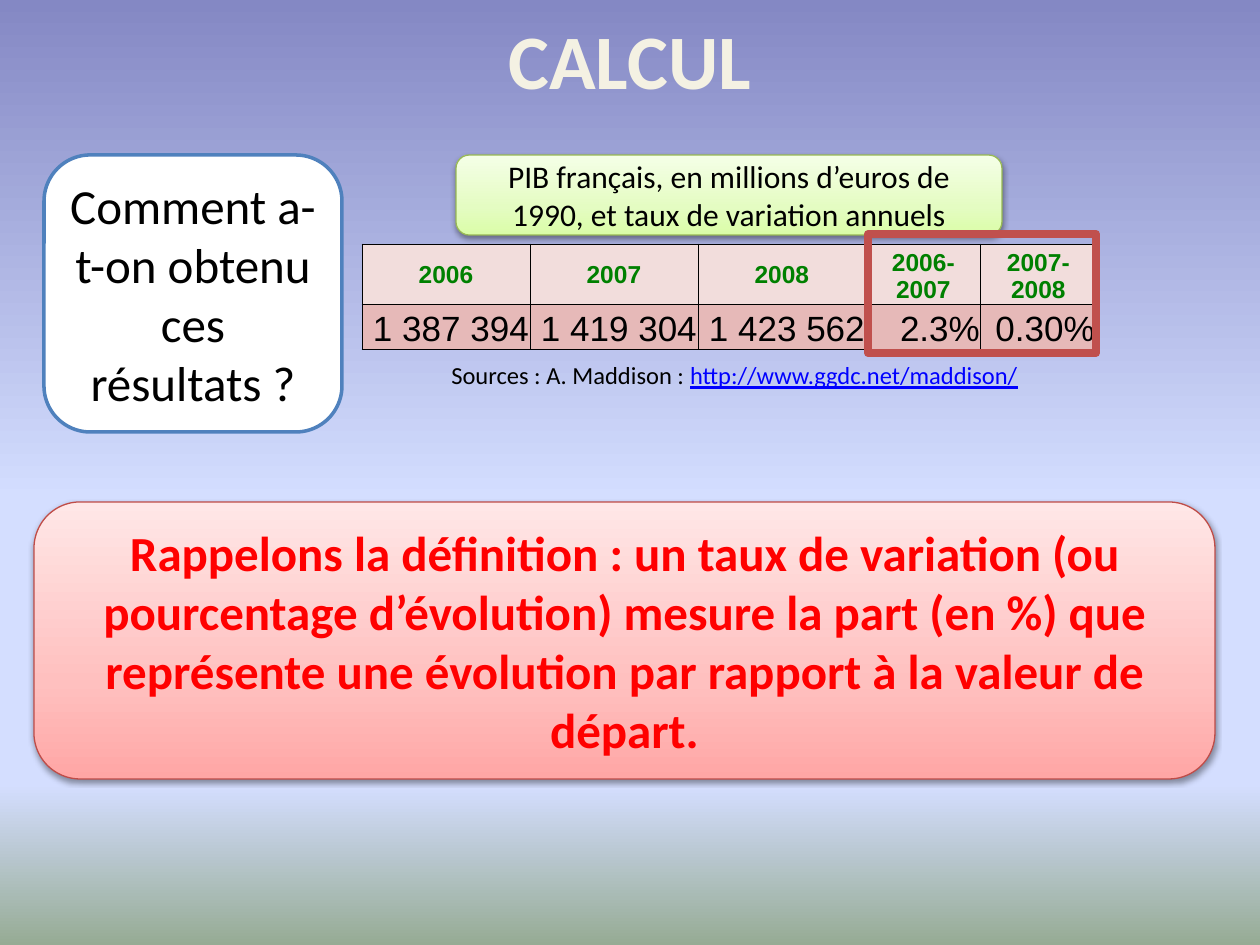
from lxml.etree import SubElement
from pptx import Presentation
from pptx.dml.color import RGBColor
from pptx.enum.shapes import MSO_SHAPE as Shape
from pptx.enum.text import MSO_ANCHOR as Anchor, PP_ALIGN as Align
from pptx.oxml import parse_xml
from pptx.oxml.ns import nsdecls, qn
from pptx.util import Pt

PX = 914400 / 126
color = RGBColor.from_string


def paint_gradient(fill, element, angle, stops):
    fill.gradient()
    fill.gradient_angle = angle
    stop_list = element.find(".//" + qn("a:gsLst"))
    for stop in list(stop_list):
        stop_list.remove(stop)
    for position, hex_color in stops:
        stop = SubElement(stop_list, qn("a:gs"), pos=str(position * 1000))
        SubElement(stop, qn("a:srgbClr"), val=hex_color)


def write(text_frame, text, size, hex_color, bold=False, name="Calibri", align=Align.CENTER):
    text_frame.text = text
    text_frame.word_wrap = True
    paragraph = text_frame.paragraphs[0]
    paragraph.alignment = align
    font = paragraph.runs[0].font
    font.size, font.bold, font.name = Pt(size), bold, name
    font.color.rgb = color(hex_color)


presentation = Presentation()
presentation.slide_width = round(1260 * PX)
presentation.slide_height = round(945 * PX)
slide = presentation.slides.add_slide(presentation.slide_layouts[6])
paint_gradient(slide.background.fill, slide._element, 270,
               [(0, "8488C4"), (53, "D4DEFF"), (83, "D4DEFF"), (100, "96AB94")])

title = slide.shapes.add_textbox(*[round(n * PX) for n in (63, 0, 1134, 118)])
write(title.text_frame, "CALCUL", 44, "F4F1E3", True)
title.text_frame.vertical_anchor = Anchor.MIDDLE

panels = [
    ((44, 155, 298, 277), "Comment a-t-on obtenu ces résultats ?", 28, "000000", False,
     "4F81BD", 2, None),
    ((34, 502, 1181, 277),
     "Rappelons la définition : un taux de variation (ou pourcentage d’évolution) mesure la part "
     "(en %) que représente une évolution par rapport à la valeur de départ.",
     28, "FF0000", True, "BF4C48", 0.75, ["FFA6A5", "FFC0BF", "FFE7E7"]),
    ((456, 155, 546, 80), "PIB français, en millions d’euros de 1990, et taux de variation annuels",
     18, "000000", False, "98B955", 0.75, ["DAFDA7", "E4FCC2", "F5FFE7"]),
]
for box, text, size, text_color, bold, line_color, line_width, gradient in panels:
    panel = slide.shapes.add_shape(Shape.ROUNDED_RECTANGLE, *[round(n * PX) for n in box])
    panel.shadow.inherit = False
    panel.line.color.rgb = color(line_color)
    panel.line.width = Pt(line_width)
    if gradient:
        paint_gradient(panel.fill, panel._element, 90, zip((0, 35, 100), gradient))
        panel._element.spPr.find(qn("a:effectLst")).append(parse_xml(
            f'<a:outerShdw {nsdecls("a")} blurRad="40000" dist="20000" dir="5400000" rotWithShape="0">'
            '<a:srgbClr val="000000"><a:alpha val="38000"/></a:srgbClr></a:outerShdw>'))
    else:
        panel.fill.solid()
        panel.fill.fore_color.rgb = color("FFFFFF")
    write(panel.text_frame, text, size, text_color, bold)
    panel.text_frame.vertical_anchor = Anchor.MIDDLE

source = slide.shapes.add_textbox(*[round(n * PX) for n in (432, 354, 605, 43)])
write(source.text_frame, "Sources : A. Maddison : ", 14, "000000")
address = source.text_frame.paragraphs[0].add_run()
address.text = "http://www.ggdc.net/maddison/"
address.font.size, address.font.name, address.font.underline = Pt(14), "Calibri", True
address.font.color.rgb = color("0000FF")

rows = [
    ["2006", "2007", "2008", "2006-2007", "2007-2008"],
    ["1 387 394", "1 419 304", "1 423 562", "2.3%", "0.30%"],
]
row_styles = [
    ("F2DDDC", (14, "008000", True, "Arial", Align.CENTER)),
    ("E6B9B8", (20, "000000", False, "Arial", Align.RIGHT)),
]
table = slide.shapes.add_table(2, 5, *[round(n * PX) for n in (362, 244, 734, 105)]).table
for column, width in zip(table.columns, (168, 168, 168, 115, 115)):
    column.width = round(width * PX)
for row, height in zip(table.rows, (60, 45)):
    row.height = round(height * PX)
for row_index, (values, (cell_color, text_style)) in enumerate(zip(rows, row_styles)):
    for column_index, value in enumerate(values):
        cell = table.cell(row_index, column_index)
        cell.margin_left = cell.margin_right = cell.margin_top = round(PX)
        cell.margin_bottom = 0
        is_year = row_index == 0 and column_index < 3
        cell.vertical_anchor = Anchor.MIDDLE if is_year else Anchor.BOTTOM
        write(cell.text_frame, value, *text_style)
        properties = cell._tc.get_or_add_tcPr()
        for side in ("lnL", "lnR", "lnT", "lnB"):
            border = SubElement(properties, qn("a:" + side), w=str(Pt(0.5)))
            SubElement(SubElement(border, qn("a:solidFill")), qn("a:srgbClr"), val="000000")
        cell.fill.solid()
        cell.fill.fore_color.rgb = color(cell_color)

rate_frame = slide.shapes.add_shape(Shape.RECTANGLE, *[round(n * PX) for n in (868, 234, 228, 119)])
rate_frame.shadow.inherit = False
rate_frame.fill.background()
rate_frame.line.color.rgb = color("C0504D")
rate_frame.line.width = Pt(4.5)

presentation.save("out.pptx")
